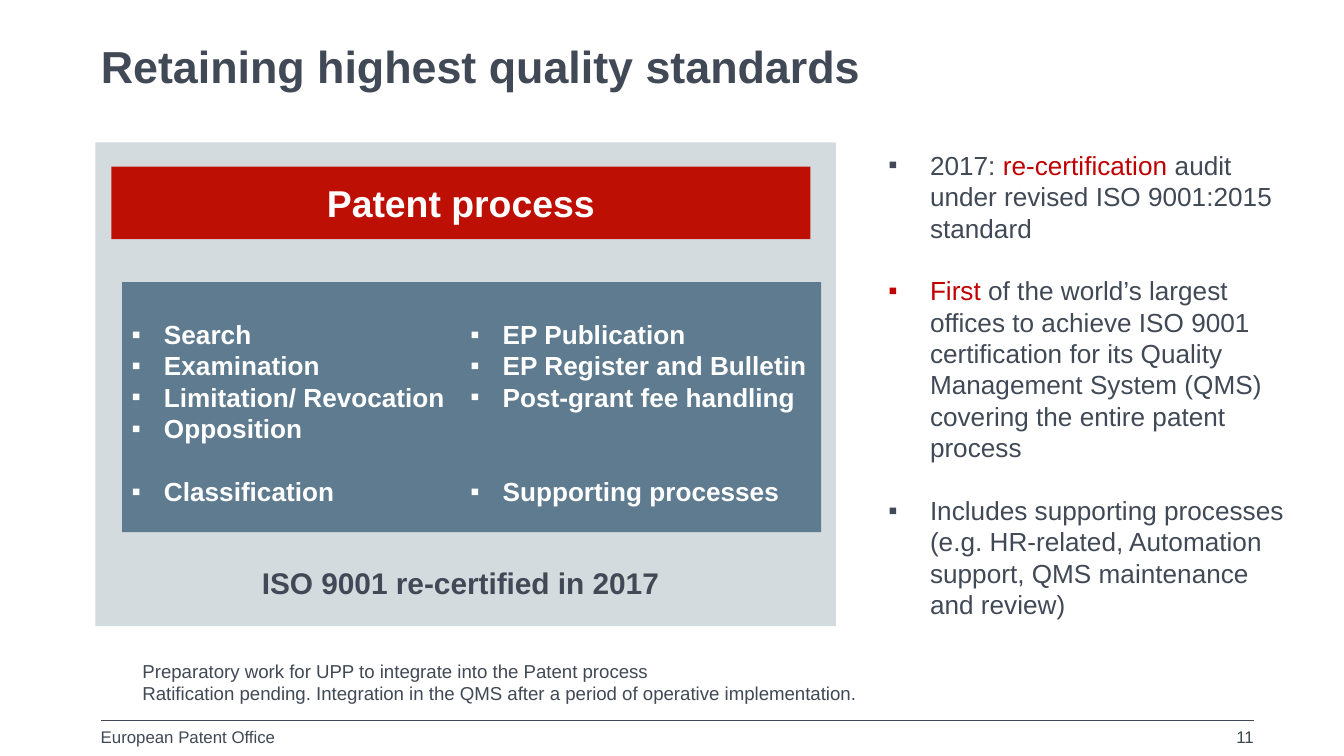
from dataclasses import dataclass

from lxml.etree import SubElement
from pptx import Presentation
from pptx.dml.color import RGBColor
from pptx.enum.shapes import MSO_CONNECTOR as Connector, MSO_SHAPE as Shape
from pptx.enum.text import MSO_ANCHOR as Anchor, MSO_AUTO_SIZE as AutoSize, PP_ALIGN as Align
from pptx.oxml.ns import qn
from pptx.util import Inches, Pt


@dataclass(frozen=True)
class Theme:
    font: str = "Arial"
    ink: str = "404955"
    number: str = "3B464D"
    accent: str = "C00000"
    banner: str = "BE0F05"
    panel: str = "D4DBDF"
    steel: str = "5F7B8F"
    white: str = "FFFFFF"
    title: int = 24
    heading: int = 20
    caption: int = 16
    body: int = 14
    note: int = 10
    footer: int = 9
    line: float = 16.8


class SlideBuilder:
    def __init__(self, page, theme):
        self.page = page
        self.theme = theme

    def place(self, box, left, top, width, height):
        box.left, box.top = Inches(left), Inches(top)
        box.width, box.height = Inches(width), Inches(height)

    def frame(self, box, insets=(0, 0), anchor=Anchor.TOP):
        frame = box.text_frame
        frame.word_wrap = True
        frame.auto_size = AutoSize.NONE
        frame.vertical_anchor = anchor
        frame.margin_left = frame.margin_right = Inches(insets[0])
        frame.margin_top = frame.margin_bottom = Inches(insets[1])
        return frame

    def style(self, para, size, color, bold=False, align=Align.LEFT):
        para.alignment = align
        para.space_before = Pt(0)
        for span in para.runs:
            font = span.font
            font.name, font.size, font.bold = self.theme.font, Pt(size), bold
            font.color.rgb = RGBColor.from_string(color)

    def title(self, text, *area):
        box = self.page.shapes.title
        self.place(box, *area)
        frame = self.frame(box)
        frame.text = text
        self.style(frame.paragraphs[0], self.theme.title, self.theme.ink, True)

    def text(self, text, area, size, color=None, bold=False, align=Align.LEFT,
             insets=(0, 0), anchor=Anchor.TOP):
        box = self.page.shapes.add_textbox(*map(Inches, area))
        frame = self.frame(box, insets, anchor)
        frame.text = text
        for para in frame.paragraphs:
            self.style(para, size, color or self.theme.ink, bold, align)

    def rectangle(self, area, fill, text=""):
        box = self.page.shapes.add_shape(Shape.RECTANGLE, *map(Inches, area))
        box.shadow.inherit = False
        box.fill.solid()
        box.fill.fore_color.rgb = RGBColor.from_string(fill)
        box.line.fill.background()
        if text:
            frame = self.frame(box, (0.08, 0.04), Anchor.MIDDLE)
            frame.text = text
            self.style(frame.paragraphs[0], self.theme.heading, self.theme.white, True, Align.CENTER)

    def bullets(self, box, items, indent, color, bold=False, insets=(0, 0)):
        frame = self.frame(box, insets)
        for index, (blank_lines, spans) in enumerate(items):
            para = frame.add_paragraph() if index else frame.paragraphs[0]
            props = para._p.get_or_add_pPr()
            props.set("marL", str(Inches(indent)))
            props.set("indent", str(-Inches(indent)))
            SubElement(props, qn("a:buFont"), typeface=self.theme.font)
            SubElement(props, qn("a:buChar"), char="▪")
            for text, _ in spans:
                para.add_run().text = text
            self.style(para, self.theme.body, color, bold)
            for span, (_, tint) in zip(para.runs, spans):
                span.font.color.rgb = RGBColor.from_string(tint or color)
            para.space_before = Pt(blank_lines * self.theme.line)

    def column(self, items, *area):
        box = self.page.shapes.add_textbox(*map(Inches, area))
        entries = [(blank_lines, [(text, None)]) for blank_lines, text in items]
        self.bullets(box, entries, 0.24, self.theme.white, True)

    def side_list(self, items, *area):
        box = self.page.placeholders[1]
        self.place(box, *area)
        self.bullets(box, items, 0.31, self.theme.ink, insets=(0.1, 0.05))

    def rule(self, left, right, top):
        line = self.page.shapes.add_connector(
            Connector.STRAIGHT, Inches(left), Inches(top), Inches(right), Inches(top))
        line.line.color.rgb = RGBColor.from_string(self.theme.ink)
        line.line.width = Pt(0.75)
        SubElement(line._element.spPr, qn("a:effectLst"))


def main():
    deck = Presentation()
    deck.slide_width = Inches(10)
    deck.slide_height = deck.slide_width * 9 // 16
    theme = Theme()
    slide = SlideBuilder(deck.slides.add_slide(deck.slide_layouts[1]), theme)

    slide.rule(0.75, 9.33, 5.36)
    slide.text("European Patent Office", (0.75, 5.41, 1.7, 0.19), theme.footer)
    slide.text("11", (8.7, 5.41, 0.63, 0.19), theme.footer, theme.number, align=Align.RIGHT)
    slide.title("Retaining highest quality standards", 0.75, 0.29, 8.58, 0.44)
    slide.text(
        "Preparatory work for UPP to integrate into the Patent process\n"
        "Ratification pending. Integration in the QMS after a period of operative implementation.",
        (1.06, 4.74, 6.09, 0.5), theme.note, anchor=Anchor.BOTTOM)

    slide.side_list([
        (0, [("2017: ", None), ("re-certification", theme.accent),
             (" audit under revised ISO 9001:2015 standard", None)]),
        (1, [("First ", theme.accent),
             ("of the world’s largest offices to achieve ISO 9001 certification for its "
              "Quality Management System (QMS) covering the entire patent process", None)]),
        (1, [("Includes supporting processes (e.g. HR-related, Automation support, "
              "QMS maintenance and review)", None)]),
    ], 6.51, 1.06, 3.25, 3.64)

    slide.rectangle((0.71, 1.06, 5.51, 3.6), theme.panel)
    slide.rectangle((0.83, 1.24, 5.2, 0.54), theme.banner, "Patent process")
    slide.rectangle((0.91, 2.1, 5.2, 1.86), theme.steel)
    columns = [
        [(0, "Search"), (0, "Examination"), (0, "Limitation/ Revocation"),
         (0, "Opposition"), (1, "Classification")],
        [(0, "EP Publication"), (0, "EP Register and Bulletin"),
         (0, "Post-grant fee handling"), (2, "Supporting processes")],
    ]
    for index, items in enumerate(columns):
        slide.column(items, 0.98 + index * 2.52, 2.37, 2.52, 1.5)
    slide.text("ISO 9001 re-certified in 2017", (1.85, 4.15, 3.31, 0.37), theme.caption,
               bold=True, insets=(0.1, 0.05))

    deck.save("out.pptx")


if __name__ == "__main__":
    main()
